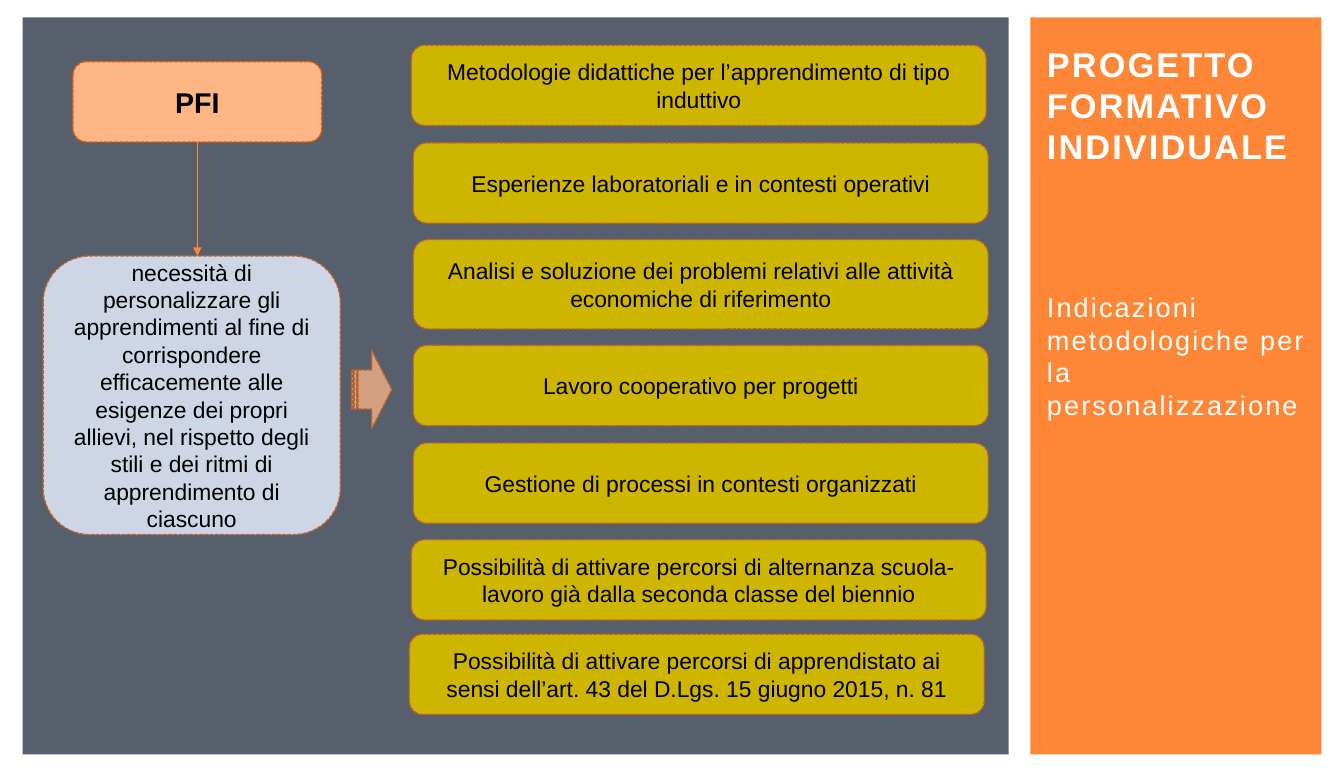
from dataclasses import dataclass

from lxml import etree
from pptx import Presentation
from pptx import util as u
from pptx.dml.color import RGBColor
from pptx.enum import dml, shapes, text
from pptx.oxml import ns


@dataclass(frozen=True)
class Theme:
    font: str = "Arial"
    white: str = "FFFFFF"
    black: str = "000000"
    orange: str = "FE8637"
    slate: str = "575F6D"
    peach: str = "FEB687"
    mustard: str = "CEB500"
    mist: str = "CED6E6"
    edge: str = "BC6329"
    pfi_edge: str = "E75C01"
    title_pt: float = 24
    subtitle_pt: float = 19
    pfi_pt: float = 20
    body_pt: float = 16
    edge_pt: float = 0.9
    arrow_pt: float = 0.75
    tracking: int = 150


@dataclass(frozen=True)
class Box:
    x: float
    y: float
    w: float
    h: float


@dataclass(frozen=True)
class Card:
    box: Box
    label: str
    fill: str
    edge: str
    size: float
    bold: bool = False


@dataclass(frozen=True)
class Method:
    x: float
    y: float
    label: str
    h: float = 56.2


T = Theme()
PANELS = [
    (Box(721.4, 12.2, 203.8, 516.2), T.orange),
    (Box(15.8, 12.2, 690.5, 516.2), T.slate),
]
METHODS = [
    Method(288, 31.7, "Metodologie didattiche per l’apprendimento di tipo induttivo"),
    Method(289.4, 100.1, "Esperienze laboratoriali e in contesti operativi"),
    Method(289.4, 167.8, "Analisi e soluzione dei problemi relativi alle attività economiche di riferimento", 62.6),
    Method(289.4, 241.9, "Lavoro cooperativo per progetti"),
    Method(289.4, 310.3, "Gestione di processi in contesti organizzati"),
    Method(288, 378, "Possibilità di attivare percorsi di alternanza scuola-lavoro già dalla seconda classe del biennio"),
    Method(286.6, 444.2, "Possibilità di attivare percorsi di apprendistato ai sensi dell’art. 43 del D.Lgs. 15 giugno 2015, n. 81"),
]
CARDS = [
    Card(Box(51.1, 43.2, 174.2, 56.2), "PFI", T.peach, T.pfi_edge, T.pfi_pt, True),
    *(Card(Box(m.x, m.y, 402.5, m.h), m.label, T.mustard, T.edge, T.body_pt) for m in METHODS),
    Card(
        Box(30.2, 179.3, 208.1, 195.1),
        "necessità di personalizzare gli apprendimenti al fine di corrispondere efficacemente "
        "alle esigenze dei propri allievi, nel rispetto degli stili e dei ritmi di "
        "apprendimento di ciascuno",
        T.mist, T.edge, T.body_pt,
    ),
]


def rgb(color: str) -> RGBColor:
    return RGBColor.from_string(color)


def add_filled(s, kind, box: Box, fill: str, edge: str = ""):
    sp = s.shapes.add_shape(kind, u.Pt(box.x), u.Pt(box.y), u.Pt(box.w), u.Pt(box.h))
    sp.shadow.inherit = False
    sp.fill.solid()
    sp.fill.fore_color.rgb = rgb(fill)
    if edge:
        sp.line.color.rgb = rgb(edge)
        sp.line.width = u.Pt(T.edge_pt)
        sp.line.dash_style = dml.MSO_LINE.SQUARE_DOT
    else:
        sp.line.fill.background()
    return sp


def write(sp, label: str, size: float, color: str, align, bold: bool = False):
    tf = sp.text_frame
    tf.text = label
    tf.word_wrap = True
    tf.auto_size = text.MSO_AUTO_SIZE.NONE
    tf.vertical_anchor = text.MSO_ANCHOR.MIDDLE
    p = tf.paragraphs[0]
    p.alignment = align
    p.font.name = T.font
    p.font.size = u.Pt(size)
    p.font.bold = bold
    p.font.color.rgb = rgb(color)
    return p


def add_card(s, card: Card) -> None:
    sp = add_filled(s, shapes.MSO_SHAPE.ROUNDED_RECTANGLE, card.box, card.fill, card.edge)
    write(sp, card.label, card.size, T.black, text.PP_ALIGN.CENTER, card.bold)


def fill_placeholder(sp, box: Box, label: str, size: float, bold: bool = False):
    sp.left, sp.top, sp.width, sp.height = (u.Pt(v) for v in (box.x, box.y, box.w, box.h))
    p = write(sp, label, size, T.white, text.PP_ALIGN.LEFT, bold)
    for r in p.runs:
        r.font._element.set("spc", str(T.tracking))
    return p


def add_arrow(s, x: float, top: float, bottom: float) -> None:
    cn = s.shapes.add_connector(
        shapes.MSO_CONNECTOR.STRAIGHT, u.Pt(x), u.Pt(top), u.Pt(x), u.Pt(bottom)
    )
    cn.line.color.rgb = rgb(T.orange)
    cn.line.width = u.Pt(T.arrow_pt)
    etree.SubElement(cn.line._get_or_add_ln(), ns.qn("a:tailEnd"), type="triangle")
    etree.SubElement(cn._element.spPr, ns.qn("a:effectLst"))


def main() -> None:
    prs = Presentation()
    prs.slide_width, prs.slide_height = u.Pt(941), u.Pt(540)
    s = prs.slides.add_slide(prs.slide_layouts[0])
    title, subtitle = s.placeholders

    for i, (box, color) in enumerate(PANELS):
        sp = add_filled(s, shapes.MSO_SHAPE.RECTANGLE, box, color)
        s.shapes._spTree.insert(2 + i, sp._element)

    fill_placeholder(title, Box(725.8, 15.1, 215.3, 144),
                     "PROGETTO FORMATIVO INDIVIDUALE", T.title_pt, True)
    title.text_frame.margin_bottom = u.Pt(31)
    p = fill_placeholder(subtitle, Box(725.8, 177.1, 203.8, 144),
                         "Indicazioni metodologiche per la personalizzazione", T.subtitle_pt)
    p.space_before = u.Pt(3.8)

    for card in CARDS:
        add_card(s, card)
    add_arrow(s, 138.2, 99.4, 179.3)

    sp = add_filled(s, shapes.MSO_SHAPE.STRIPED_RIGHT_ARROW,
                    Box(246.2, 245.5, 28.1, 54.7), T.peach, T.edge)
    color = sp._element.spPr.find(ns.qn("a:solidFill"))[0]
    etree.SubElement(color, ns.qn("a:alpha"), val="75000")

    prs.save("out.pptx")


if __name__ == "__main__":
    main()
